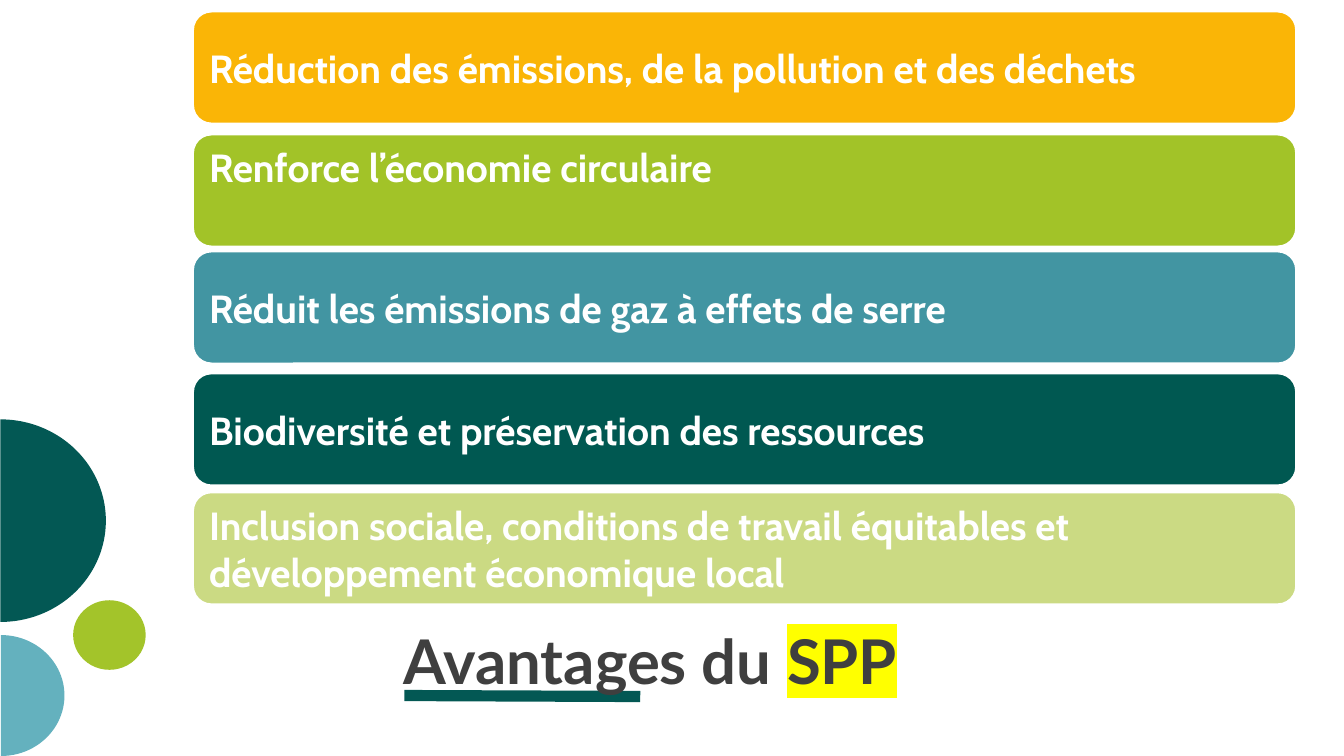
from lxml import etree
from pptx import Presentation
from pptx import util as u
from pptx.dml.color import RGBColor
from pptx.enum import shapes, text
from pptx.oxml.ns import qn

KIND = shapes.MSO_SHAPE
MID, TOP = text.MSO_ANCHOR.MIDDLE, text.MSO_ANCHOR.TOP


def rgb(code):
    return RGBColor.from_string(code)


def draw(kind, left, top, wide, high, fill):
    item = page.shapes.add_shape(
        kind, u.Inches(left), u.Inches(top), u.Inches(wide), u.Inches(high))
    item.shadow.inherit = False
    item.fill.solid()
    item.fill.fore_color.rgb = rgb(fill)
    item.line.fill.background()
    return item


deck = Presentation()
deck.slide_width, deck.slide_height = u.Inches(13.33), u.Inches(7.5)
page = deck.slides.add_slide(deck.slide_layouts[6])

# Underline of the title
rule = page.shapes.add_connector(
    shapes.MSO_CONNECTOR.STRAIGHT,
    u.Inches(4.01), u.Inches(6.9), u.Inches(6.35), u.Inches(6.91))
rule.line.color.rgb = rgb("035854")
rule.line.width = u.Pt(8)
etree.SubElement(rule._element.spPr, qn("a:effectLst"))

# Discs at the left edge, two of them halved
for left, top, wide, high, fill in [
        (-1, 4.12, 2.01, 2.09, "035854"),
        (-0.59, 6.27, 1.2, 1.26, "64B1BE")]:
    half = draw(KIND.PIE, left, top, wide, high, fill)
    half.adjustments[0], half.adjustments[1] = 0, 108
    half.rotation = 270
dot = draw(KIND.OVAL, 0.74, 5.94, 0.69, 0.72, "A3C42A")
dot.rotation = 270

# Title
box = page.shapes.add_textbox(
    u.Inches(4), u.Inches(5.4), u.Inches(8.68), u.Inches(1.51))
frame = box.text_frame
frame.word_wrap = True
frame.vertical_anchor = text.MSO_ANCHOR.BOTTOM
frame.margin_left = frame.margin_right = 0
frame.margin_top = frame.margin_bottom = 0
line = frame.paragraphs[0]
line.line_spacing = 0.8
for words, mark in [("Avantages du ", None), ("SPP", "FFFF00")]:
    run = line.add_run()
    run.text = words
    run.font.size = u.Pt(44)
    run.font.bold = True
    run.font.color.rgb = rgb("3F3F3F")
    if mark:
        glow = etree.Element(qn("a:highlight"))
        etree.SubElement(glow, qn("a:srgbClr"), val=mark)
        run.font._element.find(qn("a:solidFill")).addnext(glow)
    run.font.name = "Lato"

# Benefit cards: top, colour, anchor, upper inset, words
for top, fill, hold, inset, words in [
        (0.11, "FAB506", MID, 0.11,
         "Réduction des émissions, de la pollution et des déchets"),
        (1.33, "A2C328", TOP, 0.04, "Renforce l’économie circulaire"),
        (2.49, "4295A2", MID, 0.11,
         "Réduit les émissions de gaz à effets de serre"),
        (3.7, "005851", MID, 0.11,
         "Biodiversité et préservation des ressources"),
        (4.88, "CBDA83", MID, 0.11,
         "Inclusion sociale, conditions de travail équitables et "
         "développement économique local")]:
    card = draw(KIND.ROUNDED_RECTANGLE, 1.91, top, 10.95, 1.12, fill)
    card.line.color.rgb = rgb("FFFFFF")
    card.line.width = u.Pt(2)
    frame = card.text_frame
    frame.word_wrap = True
    frame.vertical_anchor = hold
    frame.margin_left = frame.margin_right = u.Inches(0.11)
    frame.margin_top, frame.margin_bottom = u.Inches(inset), u.Inches(0.11)
    frame.text = words
    line = frame.paragraphs[0]
    line.alignment = text.PP_ALIGN.LEFT
    font = line.runs[0].font
    font.name, font.size, font.bold = "Cabin", u.Pt(28), True
    font.color.rgb = rgb("FFFFFF")

deck.save("out.pptx")
